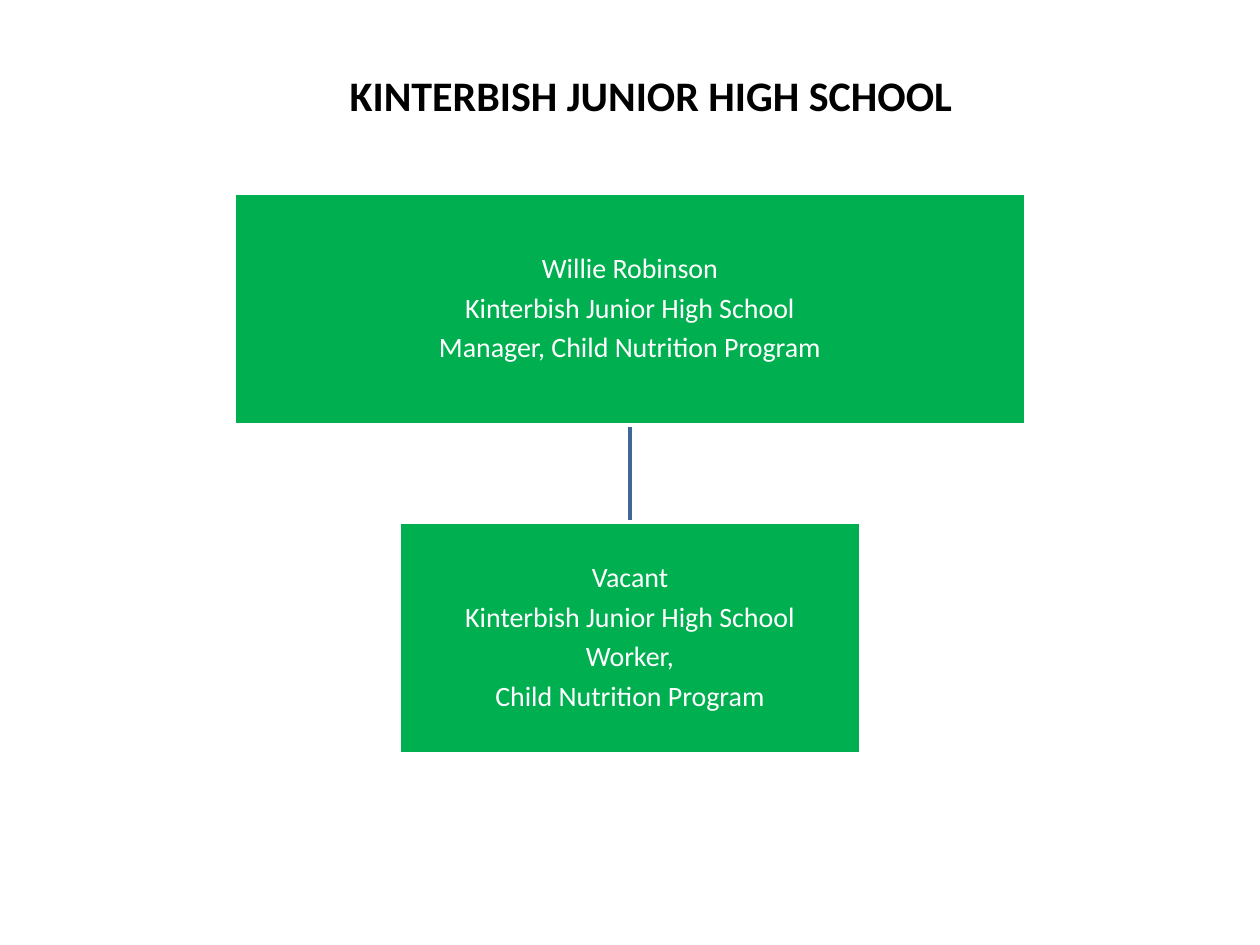
from lxml import etree
from pptx import Presentation
from pptx import util as u
from pptx.dml.color import RGBColor
from pptx.enum import shapes, text
from pptx.oxml.ns import qn

PX = 914400 / 126
MID = 630  # axis shared by the boxes and the line
HIGH = 232
TOPS = (193, 522)
SCHOOL = "Kinterbish Junior High School"


def px(n):
    return u.Emu(round(n * PX))


def color(code):
    return RGBColor.from_string(code)


def style(para, size, code, bold=False):
    para.alignment = text.PP_ALIGN.CENTER
    font = para.font
    font.name, font.size, font.bold = "Calibri", u.Pt(size), bold
    font.color.rgb = color(code)


def add_title(slide, words):
    title = slide.shapes.title
    title.left, title.top, title.width, title.height = map(px, (315, 63, 672, 63))
    frame = title.text_frame
    frame.text = words
    frame.auto_size = text.MSO_AUTO_SIZE.NONE
    frame.vertical_anchor = text.MSO_ANCHOR.TOP
    style(frame.paragraphs[0], 24, "000000", True)


def add_link(slide, top, end):
    link = slide.shapes.add_connector(
        shapes.MSO_CONNECTOR.STRAIGHT, px(MID), px(top), px(MID), px(end))
    link.line.color.rgb = color("3F6797")
    link.line.width = u.Pt(2)
    etree.SubElement(link._element.spPr, qn("a:effectLst"))


def add_box(slide, top, wide, lines):
    box = slide.shapes.add_shape(
        shapes.MSO_SHAPE.RECTANGLE,
        px(MID - wide / 2), px(top), px(wide), px(HIGH))
    box.shadow.inherit = False
    box.fill.solid()
    box.fill.fore_color.rgb = color("00B050")
    box.line.color.rgb = color("FFFFFF")
    box.line.width = u.Pt(2)
    frame = box.text_frame
    frame.word_wrap = True
    frame.vertical_anchor = text.MSO_ANCHOR.MIDDLE
    frame.margin_left = frame.margin_right = px(1)
    frame.margin_top = frame.margin_bottom = px(1)
    frame.text = "\n".join(lines)
    for para in frame.paragraphs:
        style(para, 16, "FFFFFF")
        para.line_spacing = 0.9
        para.space_after = u.Pt(5.3)


def main():
    deck = Presentation()
    deck.slide_width, deck.slide_height = u.Inches(10), u.Inches(7.5)
    slide = deck.slides.add_slide(deck.slide_layouts[5])
    add_title(slide, "KINTERBISH JUNIOR HIGH SCHOOL")

    # Line first, so the white box borders cover its ends
    add_link(slide, TOPS[0] + HIGH, TOPS[1])

    # Manager above, worker below
    add_box(slide, TOPS[0], 791,
            ["Willie Robinson", SCHOOL, "Manager, Child Nutrition Program"])
    add_box(slide, TOPS[1], 462,
            ["Vacant", SCHOOL, "Worker,", "Child Nutrition Program"])

    deck.save("out.pptx")


if __name__ == "__main__":
    main()
